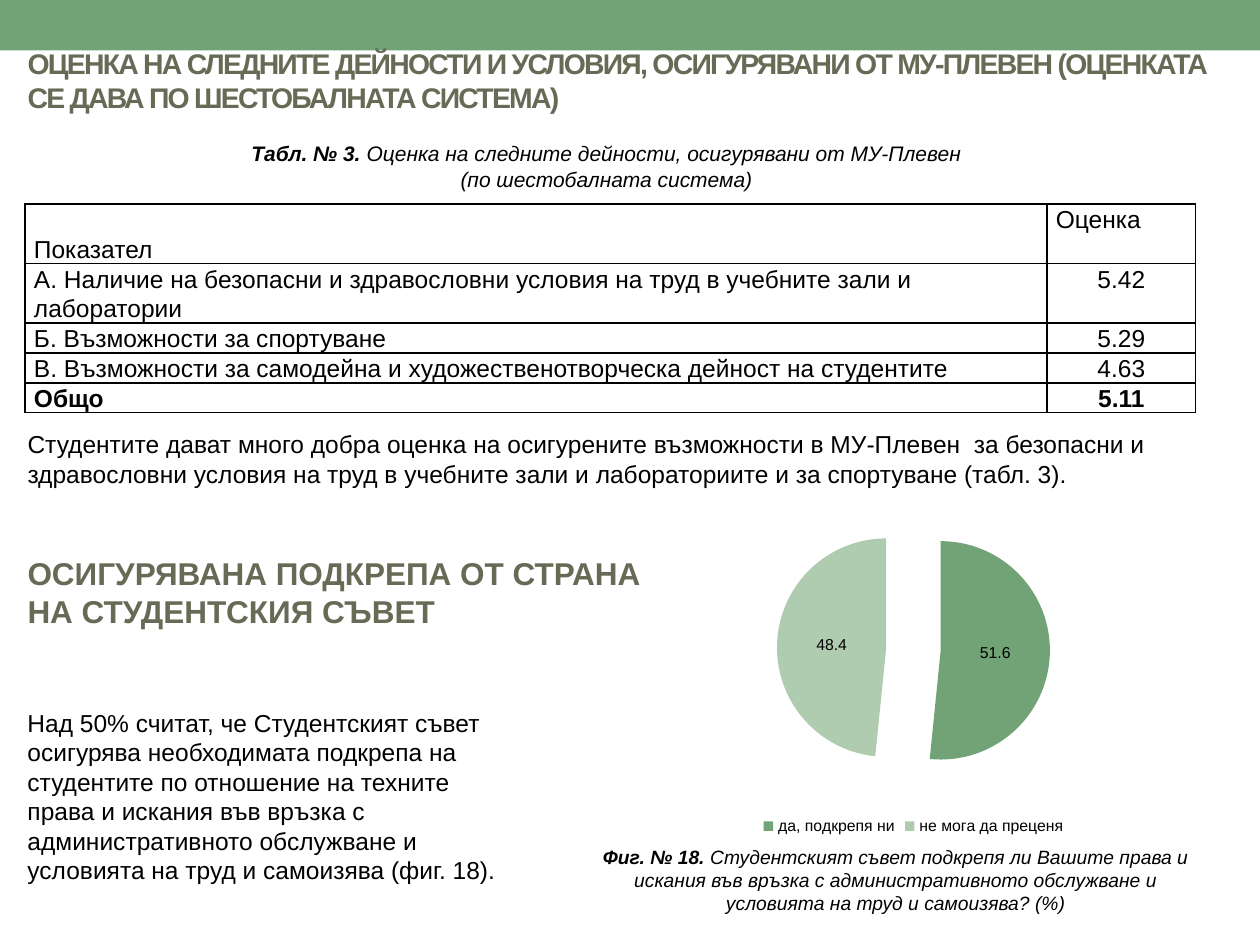
from collections import namedtuple

from lxml.etree import SubElement
from pptx import Presentation
from pptx.chart.data import CategoryChartData
from pptx.dml.color import RGBColor
from pptx.enum.chart import XL_CHART_TYPE, XL_LABEL_POSITION, XL_LEGEND_POSITION
from pptx.enum.shapes import MSO_SHAPE
from pptx.enum.text import MSO_ANCHOR, PP_ALIGN
from pptx.oxml.ns import qn
from pptx.util import Inches, Pt

UNIT = Inches(0.1)
FONT = "Arial"
GREEN, PALE_GREEN, OLIVE, BLACK = "72A376", "B0CCB0", "676A55", "000000"
LINE_POINTS = 17


class Box(namedtuple("Box", "left top width height")):
    def inner(self, left, top, width, height):
        return Box(self.left + left, self.top + top, width, height)

    def lengths(self):
        return [round(value * UNIT) for value in self]


def color(value):
    return RGBColor.from_string(value)


def write_text(frame, paragraphs, size=14, ink=BLACK, bold=False, italic=False,
               align=PP_ALIGN.LEFT, line_spacing=None, tracking=None):
    for index, runs in enumerate(paragraphs):
        paragraph = frame.add_paragraph() if index else frame.paragraphs[0]
        paragraph.alignment = align
        paragraph.line_spacing = line_spacing
        for text, run_bold in runs:
            run = paragraph.add_run()
            run.text = text
            run.font.name = FONT
            run.font.size = Pt(size)
            run.font.bold = bold or run_bold
            run.font.italic = italic
            run.font.color.rgb = color(ink)
            if tracking is not None:
                run._r.get_or_add_rPr().set("spc", str(tracking))


def add_text(slide, box, paragraphs, anchor=MSO_ANCHOR.TOP, **text_format):
    frame = slide.shapes.add_textbox(*box.lengths()).text_frame
    frame.word_wrap = True
    frame.vertical_anchor = anchor
    write_text(frame, paragraphs, **text_format)


def outline_cell(cell):
    properties = cell._tc.get_or_add_tcPr()
    for index, side in enumerate(("lnL", "lnR", "lnT", "lnB")):
        line = properties.makeelement(qn(f"a:{side}"), {"w": str(int(Pt(1)))})
        fill = SubElement(line, qn("a:solidFill"))
        SubElement(fill, qn("a:srgbClr"), val=BLACK)
        properties.insert(index, line)


def add_header(slide, box):
    bar = slide.shapes.add_shape(MSO_SHAPE.RECTANGLE, *box.inner(0, 0, box.width, 4).lengths())
    bar.shadow.inherit = False
    bar.fill.solid()
    bar.fill.fore_color.rgb = color(GREEN)
    bar.line.fill.background()
    title = ("ОЦЕНКА НА СЛЕДНИТЕ ДЕЙНОСТИ И УСЛОВИЯ, ОСИГУРЯВАНИ ОТ МУ-ПЛЕВЕН "
             "(ОЦЕНКАТА СЕ ДАВА ПО ШЕСТОБАЛНАТА СИСТЕМА)")
    add_text(slide, box.inner(1.2, 3.6, 96.1, 5.5), [[(title, True)]],
             anchor=MSO_ANCHOR.MIDDLE, size=16.2, ink=OLIVE, tracking=-100)


def add_rating_table(slide, box):
    rows = [
        ("Показател", "Оценка", 2),
        ("А. Наличие на безопасни и здравословни условия на труд в учебните зали и лаборатории",
         "5.42", 2),
        ("Б. Възможности за спортуване", "5.29", 1),
        ("В. Възможности за самодейна и художественотворческа дейност на студентите", "4.63", 1),
        ("Общо", "5.11", 1),
    ]
    table = slide.shapes.add_table(len(rows), 2, *box.lengths()).table
    table.columns[0].width = round(81.1 * UNIT)
    table.columns[1].width = round((box.width - 81.1) * UNIT)
    for row_index, (label, rating, lines) in enumerate(rows):
        table.rows[row_index].height = Pt(LINE_POINTS * lines)
        is_header, is_total = row_index == 0, row_index == len(rows) - 1
        for column_index, text in enumerate((label, rating)):
            cell = table.cell(row_index, column_index)
            cell.margin_left = cell.margin_right = Inches(0.07)
            cell.margin_top = cell.margin_bottom = 0
            cell.fill.background()
            outline_cell(cell)
            if is_header and column_index == 0:
                cell.vertical_anchor = MSO_ANCHOR.BOTTOM
            centered = column_index == 1 and not is_header
            write_text(cell.text_frame, [[(text, is_total)]], line_spacing=Pt(LINE_POINTS),
                       align=PP_ALIGN.CENTER if centered else PP_ALIGN.LEFT)


def add_rating_section(slide, box):
    add_text(slide, box.inner(0.1, 0, 93.7, 5), [
        [("Табл. № 3.", True), (" Оценка на следните дейности, осигурявани от МУ-Плевен", False)],
        [("(по шестобалната система)", False)],
    ], size=12, italic=True, align=PP_ALIGN.CENTER)
    add_rating_table(slide, box.inner(0.8, 5.5, 92.9, 16.4))
    comment = ("Студентите дават много добра оценка на осигурените възможности в МУ-Плевен  "
               "за безопасни и здравословни условия на труд в учебните зали и лабораториите "
               "и за спортуване (табл. 3).")
    add_text(slide, box.inner(0, 22.9, 93.9, 5.7), [[(comment, False)]])


def add_support_chart(slide, box):
    data = CategoryChartData(number_format="0.0")
    data.categories = ["да, подкрепя ни", "не мога да преценя"]
    data.add_series("Series 1", [51.6, 48.4])
    chart = slide.shapes.add_chart(XL_CHART_TYPE.PIE, *box.lengths(), data).chart
    chart.has_title = False
    chart.font.name = FONT
    chart.font.size = Pt(18)
    chart.font.color.rgb = color(BLACK)
    chart.has_legend = True
    chart.legend.position = XL_LEGEND_POSITION.BOTTOM
    chart.legend.include_in_layout = False
    chart.legend.font.size = Pt(9)
    plot = chart.plots[0]
    plot.vary_by_categories = True
    plot.has_data_labels = True
    labels = plot.data_labels
    labels.show_value = True
    labels.show_percentage = False
    labels.position = XL_LABEL_POSITION.CENTER
    labels.font.size = Pt(9)
    series = plot.series[0]
    for index, shade in enumerate((GREEN, PALE_GREEN)):
        fill = series.points[index].format.fill
        fill.solid()
        fill.fore_color.rgb = color(shade)
    element = series._element
    explosion = element.makeelement(qn("c:explosion"), {"val": "25"})
    element.find(qn("c:dPt")).addprevious(explosion)


def add_council_section(slide, box):
    add_text(slide, box.inner(0, 4.5, 51.2, 6.3),
             [[("ОСИГУРЯВАНА ПОДКРЕПА ОТ СТРАНА НА СТУДЕНТСКИЯ СЪВЕТ", True)]],
             anchor=MSO_ANCHOR.MIDDLE, size=18, ink=OLIVE)
    finding = ("Над 50% считат, че Студентският съвет осигурява необходимата подкрепа на "
               "студентите по отношение на техните права и искания във връзка с "
               "административното обслужване и условията на труд и самоизява (фиг. 18).")
    add_text(slide, box.inner(0, 16.4, 40.3, 15.1), [[(finding, False)]])
    question = ("Студентският съвет подкрепя ли Вашите права и искания във връзка с "
                "административното обслужване и условията на труд и самоизява? (%)")
    add_text(slide, box.inner(44.9, 27.3, 50, 6.6),
             [[("Фиг. № 18. ", True), (question, False)]],
             size=11, italic=True, align=PP_ALIGN.CENTER)
    add_support_chart(slide, box.inner(48.8, 0, 45, 27.4))


def main():
    presentation = Presentation()
    presentation.slide_width = 100 * UNIT
    presentation.slide_height = 75 * UNIT
    slide = presentation.slides.add_slide(presentation.slide_layouts[6])
    add_header(slide, Box(0, 0, 100, 9.1))
    add_rating_section(slide, Box(1.2, 10.7, 93.9, 28.6))
    add_council_section(slide, Box(1.2, 39.3, 94.9, 33.9))
    presentation.save("out.pptx")


if __name__ == "__main__":
    main()
